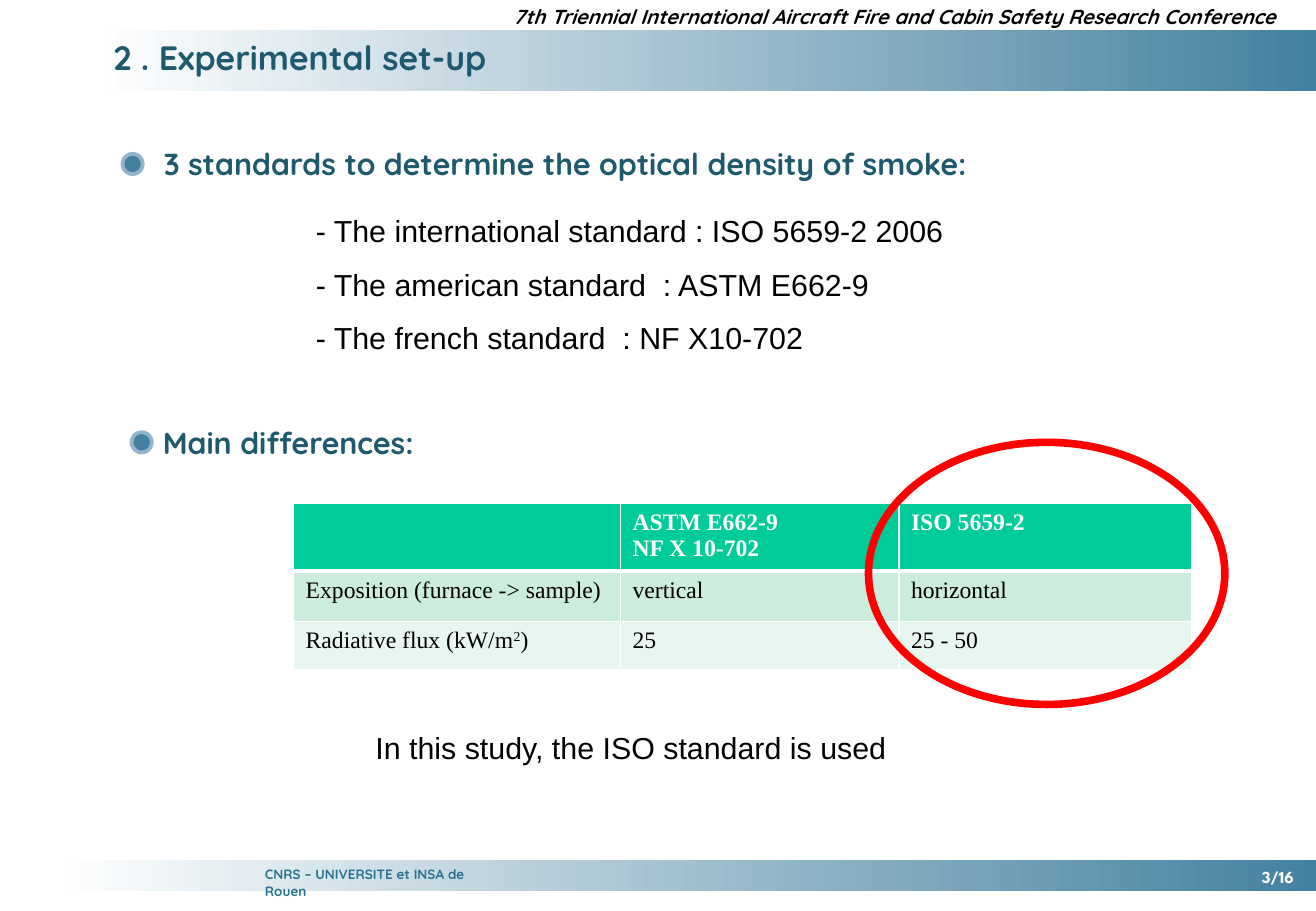
from pptx import Presentation, util as u
from pptx.dml.color import RGBColor
from pptx.enum import shapes, text
from pptx.oxml import parse_xml
from pptx.oxml.ns import nsdecls

HUES = {"white": "FFFFFF", "black": "000000", "steel": "4481A0", "rim": "94B4CD",
        "ink": "1F596D", "foot": "28738E", "red": "FF0000", "head": "00CC99",
        "mint": "CCECDE", "pale": "E7F6EF"}
FORMS = {
    "title": {"name": "Quicksand", "size": 20, "bold": True, "hue": "ink"},
    "point": {"name": "Quicksand", "size": 18, "bold": True, "hue": "ink"},
    "plain": {"name": "Arial", "size": 18, "bold": False, "hue": "black"},
    "event": {"name": "Quicksand", "size": 12, "bold": True, "italic": True, "hue": "black"},
    "foot": {"name": "Quicksand", "size": 8, "bold": True, "hue": "foot"},
    "page": {"name": "League Spartan", "size": 10, "bold": True, "hue": "white"},
    "head": {"name": "Times New Roman", "size": 14, "bold": True, "hue": "white"},
    "cell": {"name": "Times New Roman", "size": 14, "bold": False, "hue": "black"},
}
COLS, ROWS = 13, 9


class Deck:
    """Draws styled elements on one slide laid out on a grid of columns and rows."""

    def __init__(self):
        self.prs = Presentation()
        self.prs.slide_width, self.prs.slide_height = u.Inches(10.83), u.Inches(7.5)
        self.page = self.prs.slides.add_slide(self.prs.slide_layouts[1])

    def across(self, n):
        return int(self.prs.slide_width * n / COLS)

    def down(self, n):
        return int(self.prs.slide_height * n / ROWS)

    def place(self, x, y, w, h):
        return self.across(x), self.down(y), self.across(w), self.down(h)

    def hue(self, key):
        return RGBColor.from_string(HUES[key])

    def words(self, frame, lines, form, align="LEFT", gap=0):
        for i, line in enumerate(lines):
            para = frame.paragraphs[0] if i == 0 else frame.add_paragraph()
            para.alignment = getattr(text.PP_ALIGN, align)
            para.space_before = u.Pt(gap if i else 0)
            for j, part in enumerate(line.split("^")):
                run = para.add_run()
                run.text = part
                for key, value in FORMS[form].items():
                    if key == "hue":
                        run.font.color.rgb = self.hue(value)
                    else:
                        setattr(run.font, key, u.Pt(value) if key == "size" else value)
                if j % 2:
                    run.font._element.set("baseline", "30000")

    def label(self, spot, lines, form, align="LEFT", gap=0, holder=None):
        if holder is None:
            box = self.page.shapes.add_textbox(*self.place(*spot))
        else:
            box = self.page.placeholders[holder]
            box.left, box.top, box.width, box.height = self.place(*spot)
            box.element.getparent().append(box.element)
        frame = box.text_frame
        looks = {"word_wrap": True, "auto_size": text.MSO_AUTO_SIZE.NONE,
                 "vertical_anchor": text.MSO_ANCHOR.TOP}
        for key, value in looks.items():
            setattr(frame, key, value)
        self.words(frame, lines, form, align, gap)
        if holder:
            for para in frame.paragraphs:
                props = para._p.get_or_add_pPr()
                props.set("marL", "0")
                props.set("indent", "0")
                props.append(parse_xml(f"<a:buNone {nsdecls('a')}/>"))

    def band(self, spot):
        bar = self.page.shapes.add_shape(shapes.MSO_SHAPE.RECTANGLE, *self.place(*spot))
        bar.shadow.inherit = False
        bar.line.fill.background()
        bar.fill.gradient()
        bar.fill.gradient_angle = 0
        for stop, key, share in zip(bar.fill.gradient_stops, ("white", "steel"), (0, 1)):
            stop.color.rgb = self.hue(key)
            stop.position = share

    def oval(self, spot, line, width, fill=None):
        ring = self.page.shapes.add_shape(shapes.MSO_SHAPE.OVAL, *self.place(*spot))
        ring.shadow.inherit = False
        ring.line.color.rgb = self.hue(line)
        ring.line.width = u.Pt(width)
        if fill:
            ring.fill.solid()
            ring.fill.fore_color.rgb = self.hue(fill)
        else:
            ring.fill.background()

    def point(self, x, y, dot, line):
        self.label((x, y, 8.41, 0.48), [line], "point")
        self.oval((dot, y + 0.14, 0.2, 0.2), "rim", 2.25, "steel")

    def edge(self, cell, widths):
        props = cell._tc.get_or_add_tcPr()
        for i, (side, width) in enumerate(zip("LRTB", widths)):
            props.insert(i, parse_xml(
                f'<a:ln{side} {nsdecls("a")} w="{u.Pt(width)}"><a:solidFill>'
                f'<a:srgbClr val="{HUES["white"]}"/></a:solidFill></a:ln{side}>'))

    def table(self, x, y, wides, highs, rows, fills):
        spot = self.place(x, y, sum(wides), sum(highs))
        grid = self.page.shapes.add_table(len(rows), len(wides), *spot).table
        grid.horz_banding = False
        for col, wide in zip(grid.columns, wides):
            col.width = self.across(wide)
        for r, (row, high) in enumerate(zip(rows, highs)):
            grid.rows[r].height = self.down(high)
            for c, entry in enumerate(row):
                cell = grid.cell(r, c)
                cell.fill.solid()
                cell.fill.fore_color.rgb = self.hue(fills[r])
                self.edge(cell, (1, 1, 3 if r == 1 else 1, 1 if r else 3))
                if entry:
                    self.words(cell.text_frame, entry.split("\n"), "cell" if r else "head")


def main():
    deck = Deck()
    deck.band((0.9, 0.3, 12.1, 0.6))
    deck.band((0.5, 8.5, 12.5, 0.3))
    deck.label((2.5, 8.5, 2.6, 0.28), ["CNRS – UNIVERSITE et INSA de Rouen"], "foot")
    deck.label((4.7, -0.02, 8.03, 0.36),
               ["7th Triennial International Aircraft Fire and Cabin Safety Research Conference"],
               "event", "RIGHT")
    deck.label((1, 0.3, 11.3, 0.52), ["2 . Experimental set-up"], "title", holder=0)
    deck.label((12.1, 8.5, 0.8, 0.32), ["3/16"], "page", "RIGHT")
    deck.label((3, 2.04, 6.5, 1.57),
               ["- The international standard : ISO 5659-2 2006",
                "- The american standard  : ASTM E662-9",
                "- The french standard  : NF X10-702"], "plain", gap=10, holder=1)
    deck.point(1.5, 1.38, 1.21, "3 standards to determine the optical density of smoke:")
    deck.point(1.49, 4.13, 1.3, "Main differences:")
    deck.table(2.9, 4.97, (3.23, 2.75, 2.89), (0.67, 0.5, 0.48),
               [("", "ASTM E662-9\nNF X 10-702", "ISO 5659-2"),
                ("Exposition (furnace -> sample)", "vertical", "horizontal"),
                ("Radiative flux (kW/m^2^)", "25", "25 - 50")],
               ("head", "mint", "pale"))
    deck.label((3.59, 7.14, 8.4, 0.48), ["In this study, the ISO standard is used"], "plain")
    deck.oval((8.58, 4.37, 3.52, 2.59), "red", 4.5)
    deck.prs.save("out.pptx")


if __name__ == "__main__":
    main()
